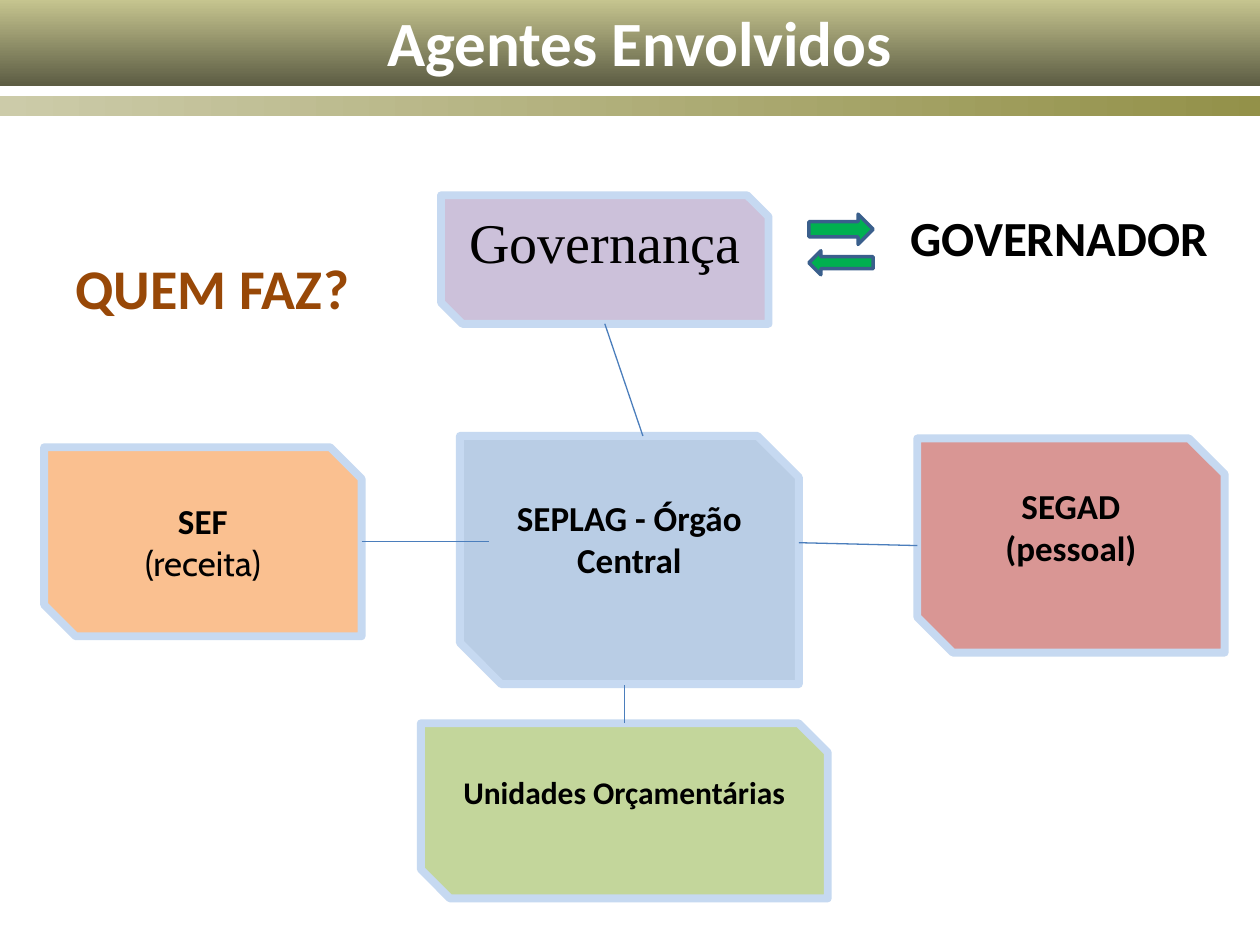
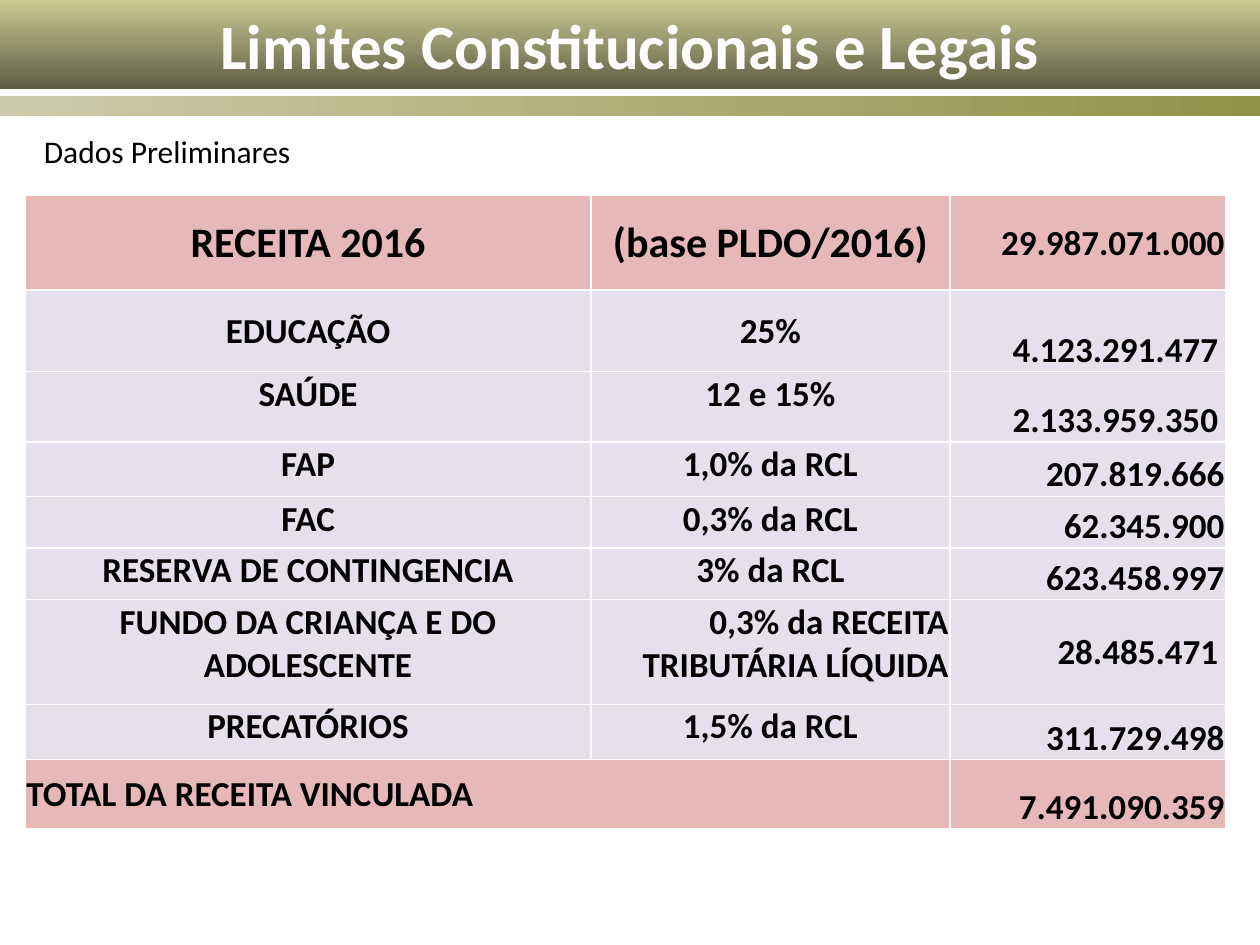
from dataclasses import dataclass

from lxml import etree
from pptx import Presentation
from pptx.dml.color import RGBColor
from pptx.enum.shapes import MSO_CONNECTOR, MSO_SHAPE as SHAPE
from pptx.enum.text import MSO_ANCHOR as ANCHOR, MSO_AUTO_SIZE, PP_ALIGN as ALIGN
from pptx.oxml.ns import qn
from pptx.util import Inches, Pt

SLIDE_W, SLIDE_H = Inches(10), Inches(7.5)
COLUMN, ROW = SLIDE_W / 10, SLIDE_H / 7.5
TITLE_GRADIENT = "CAC992", "5D5D44"
STRIPE_GRADIENT = "CCCBA9", "939149"
WHITE, BLACK, BROWN = "FFFFFF", "000000", "984807"
BOX_EDGE, LINK = "C6D9F1", "4B7EBC"
ARROW_FILL, ARROW_EDGE = "00B050", "3A5F8C"
PINK, LILAC = "E6B9B8", "E6E0EC"


@dataclass
class Box:
    """A rectangle in grid columns and rows."""
    left: float
    top: float
    width: float
    height: float

    def inner(self, left, top, width, height):
        return Box(self.left + left, self.top + top, width, height)

    def point(self, across, down):
        """Slide position at these shares of the box's width and height."""
        return (round((self.left + across * self.width) * COLUMN),
                round((self.top + down * self.height) * ROW))

    def place(self):
        return (*self.point(0, 0), round(self.width * COLUMN), round(self.height * ROW))


PAGE = Box(0, 0, 10, 7.5)


def color(hex_string):
    return RGBColor.from_string(hex_string)


def style(paragraph, size, ink=BLACK, bold=True, face="Calibri", align=None):
    font = paragraph.font
    font.size, font.bold, font.name = Pt(size), bold, face
    font.color.rgb = color(ink)
    paragraph.alignment = align


def fill_gradient(shape, stops, angle):
    shape.fill.gradient()
    shape.fill.gradient_angle = angle
    for stop, hex_string in zip(shape.fill.gradient_stops, stops):
        stop.color.rgb = color(hex_string)
    shape.line.fill.background()


def add_shape(slide, kind, box, fill=None, edge=None, weight=0):
    shape = slide.shapes.add_shape(kind, *box.place())
    shape.shadow.inherit = False
    if fill:
        shape.fill.solid()
        shape.fill.fore_color.rgb = color(fill)
    if edge:
        shape.line.color.rgb = color(edge)
        shape.line.width = Pt(weight)
    return shape


def add_label(slide, box, text, size, ink=BLACK, bold=True):
    frame = slide.shapes.add_textbox(*box.place()).text_frame
    frame.word_wrap = True
    frame.text = text
    style(frame.paragraphs[0], size, ink, bold)


def add_titled_slide(deck, text, band, indent=0.1):
    slide = deck.slides.add_slide(deck.slide_layouts[5])
    title = slide.shapes.title
    title.left, title.top, title.width, title.height = band.place()
    fill_gradient(title, TITLE_GRADIENT, 270)
    frame = title.text_frame
    frame.text = text
    frame.auto_size = MSO_AUTO_SIZE.NONE
    frame.vertical_anchor = ANCHOR.MIDDLE
    frame.margin_left = Inches(indent)
    style(frame.paragraphs[0], 36, WHITE, align=ALIGN.CENTER)

    stripe = add_shape(slide, SHAPE.RECTANGLE, PAGE.inner(0, 0.76, band.width, 0.16))
    fill_gradient(stripe, STRIPE_GRADIENT, 0)
    return slide


def add_agent(slide, box, fill, lines, lift=0):
    """Snipped box; lift raises its centred lines of (text, size, bold, face)."""
    shape = add_shape(slide, SHAPE.SNIP_2_DIAG_RECTANGLE, box, fill, BOX_EDGE, 4.5)
    frame = shape.text_frame
    frame.margin_bottom = Inches(0.05 + lift)
    frame.text = "\n".join(line[0] for line in lines)
    for paragraph, (_, size, bold, face) in zip(frame.paragraphs, lines):
        style(paragraph, size, BLACK, bold, face, ALIGN.CENTER)


def add_link(slide, start, end):
    link = slide.shapes.add_connector(MSO_CONNECTOR.STRAIGHT, *start, *end)
    link.line.color.rgb = color(LINK)
    link.line.width = Pt(0.75)
    etree.SubElement(link._element.spPr, qn("a:effectLst"))


def add_governor(slide, box):
    for kind, top, height in ((SHAPE.RIGHT_ARROW, 0.1, 0.24), (SHAPE.LEFT_ARROW, 0.39, 0.19)):
        add_shape(slide, kind, box.inner(0, top, 0.51, height), ARROW_FILL, ARROW_EDGE, 2)
    add_label(slide, box.inner(0.71, 0, 2.68, 0.57), "GOVERNADOR", 28)


def add_agent_map(slide, area):
    governance = area.inner(3.15, 0.24, 2.6, 1.02)
    revenue = area.inner(0, 2.24, 2.52, 1.5)
    hub = area.inner(3.3, 2.15, 2.69, 1.97)
    staff = area.inner(6.93, 2.17, 2.44, 1.7)
    units = area.inner(2.99, 4.43, 3.23, 1.39)

    add_label(slide, area.inner(0.15, 0.65, 2.6, 0.64), "QUEM FAZ?", 32, BROWN)
    add_agent(slide, governance, "CCC1DA",
              [("Governança", 32, False, "Times New Roman")], 0.3)
    add_agent(slide, revenue, "FAC090",
              [("SEF", 20, True, "Calibri"), ("(receita)", 20, False, "Cabin")])
    add_agent(slide, hub, "B9CDE5", [("SEPLAG - Órgão Central", 20, True, "Calibri")], 0.34)
    add_agent(slide, staff, "D99694",
              [(text, 20, True, "Calibri") for text in ("SEGAD", "(pessoal)")], 0.3)
    add_agent(slide, units, "C3D69B", [("Unidades Orçamentárias", 18, True, "Calibri")], 0.3)

    add_link(slide, governance.point(0.5, 1), hub.point(0.54, 0))
    add_link(slide, staff.point(0, 0.5), hub.point(1, 0.43))
    add_link(slide, units.point(0.5, 0), units.point(0.5, -0.22))
    add_link(slide, revenue.point(1, 0.5), revenue.point(1.4, 0.5))
    add_governor(slide, area.inner(6.07, 0.29, 3.39, 0.58))


COLUMN_WIDTHS = 4.49, 2.85, 2.19
# height, item, rule, value, anchor of item and rule, anchor of value, gap right of value
LIMITS = [
    (0.75, "RECEITA 2016", "(base PLDO/2016)", "29.987.071.000", ANCHOR.MIDDLE, ANCHOR.MIDDLE, 0.01),
    (0.65, "EDUCAÇÃO", "25%", "4.123.291.477", ANCHOR.MIDDLE, ANCHOR.BOTTOM, 0.06),
    (0.56, "SAÚDE", "12 e 15%", "2.133.959.350", ANCHOR.TOP, ANCHOR.BOTTOM, 0.06),
    (0.43, "FAP", "1,0% da RCL", "207.819.666", ANCHOR.TOP, ANCHOR.BOTTOM, 0.01),
    (0.41, "FAC", "0,3% da RCL", "62.345.900", ANCHOR.TOP, ANCHOR.BOTTOM, 0.01),
    (0.41, "RESERVA DE CONTINGENCIA", "3% da RCL", "623.458.997", ANCHOR.TOP, ANCHOR.BOTTOM, 0.01),
    (0.83, "FUNDO DA CRIANÇA E DO ADOLESCENTE", "0,3% da RECEITA TRIBUTÁRIA LÍQUIDA",
     "28.485.471", ANCHOR.TOP, ANCHOR.MIDDLE, 0.06),
    (0.44, "PRECATÓRIOS", "1,5% da RCL", "311.729.498", ANCHOR.TOP, ANCHOR.BOTTOM, 0.01),
    (0.55, "TOTAL DA RECEITA VINCULADA", "", "7.491.090.359", ANCHOR.MIDDLE, ANCHOR.BOTTOM, 0.01),
]


def add_borders(cell):
    properties = cell._tc.get_or_add_tcPr()
    for position, side in enumerate(("lnL", "lnR", "lnT", "lnB")):
        border = etree.Element(qn(f"a:{side}"), w=str(Pt(1)))
        paint = etree.SubElement(border, qn("a:solidFill"))
        etree.SubElement(paint, qn("a:srgbClr"), val=WHITE)
        properties.insert(position, border)


def format_cell(cell, text, fill, size, align, anchor, gap=0.01):
    cell.text = text
    cell.fill.solid()
    cell.fill.fore_color.rgb = color(fill)
    cell.vertical_anchor = anchor
    cell.margin_left = cell.margin_top = Inches(0.01)
    cell.margin_right, cell.margin_bottom = Inches(gap), 0
    style(cell.text_frame.paragraphs[0], size, align=align)
    add_borders(cell)


def add_limits_table(slide, box):
    table = slide.shapes.add_table(len(LIMITS), len(COLUMN_WIDTHS), *box.place()).table
    table.first_row = table.horz_banding = False
    for column, width in zip(table.columns, COLUMN_WIDTHS):
        column.width = round(width * COLUMN)

    last = len(LIMITS) - 1
    for index, (height, item, rule, value, anchor, value_anchor, gap) in enumerate(LIMITS):
        table.rows[index].height = round(height * ROW)
        fill = PINK if index in (0, last) else LILAC
        size = 20 if index else 24
        item_align = ALIGN.LEFT if index == last else ALIGN.CENTER
        rule_align = ALIGN.RIGHT if "TRIBUTÁRIA" in rule else ALIGN.CENTER
        format_cell(table.cell(index, 0), item, fill, size, item_align, anchor)
        format_cell(table.cell(index, 1), rule, fill, size, rule_align, anchor)
        format_cell(table.cell(index, 2), value, fill, 20, ALIGN.RIGHT, value_anchor, gap)
    table.cell(last, 0).merge(table.cell(last, 1))


def main():
    deck = Presentation()
    deck.slide_width, deck.slide_height = SLIDE_W, SLIDE_H

    agents = add_titled_slide(deck, "Agentes Envolvidos",
                              PAGE.inner(0, -0.03, 10.04, 0.71), indent=0.21)
    add_agent_map(agents, PAGE.inner(0.35, 1.31, 9.46, 5.82))

    limits = add_titled_slide(deck, "Limites Constitucionais e Legais",
                              PAGE.inner(0, 0, 10, 0.71))
    add_limits_table(limits, PAGE.inner(0.2, 1.55, 9.53, 5.04))
    add_label(limits, PAGE.inner(0.25, 1, 4.72, 0.4), "Dados Preliminares", 18, bold=False)

    deck.save("out.pptx")


if __name__ == "__main__":
    main()
